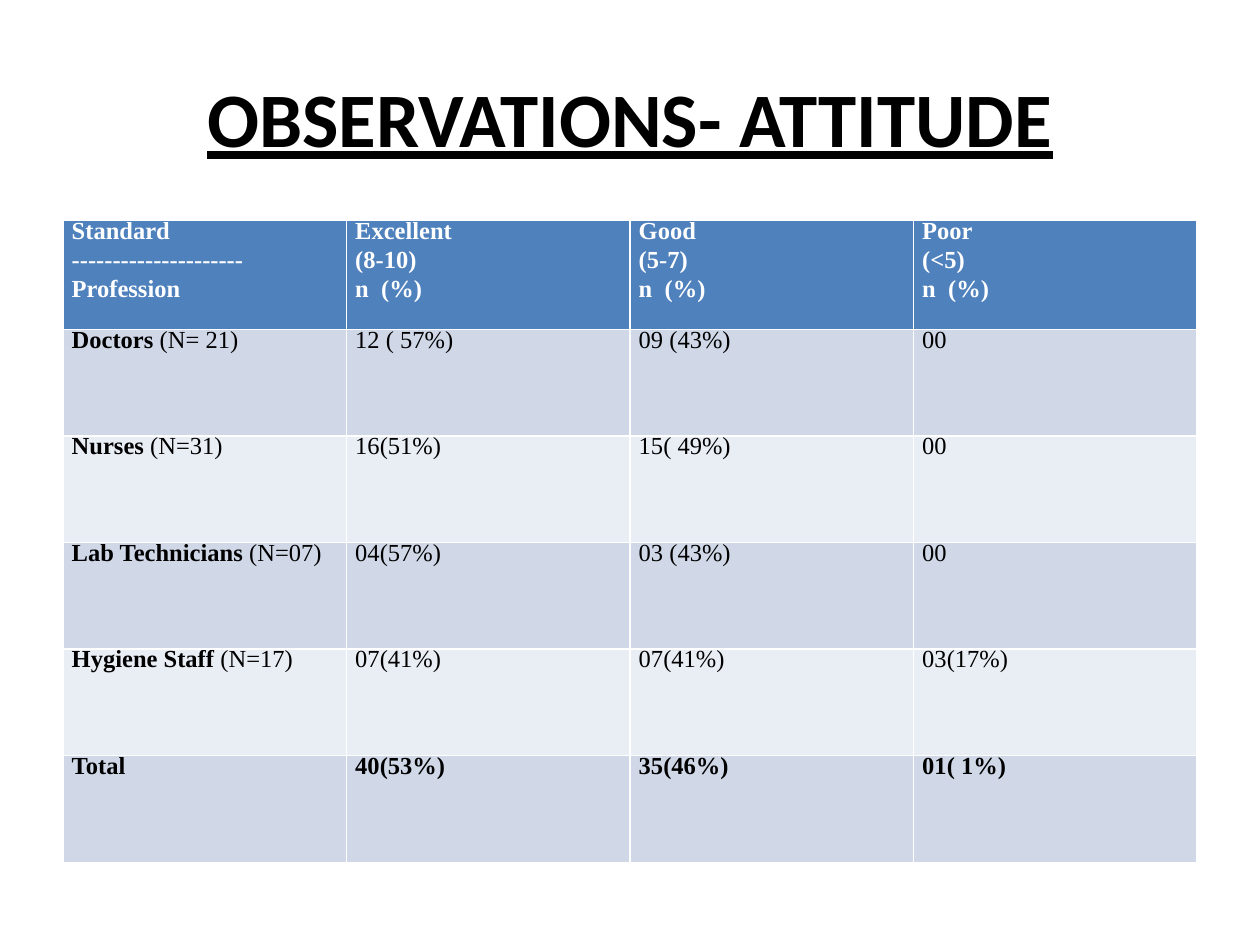
from typing import NamedTuple

from pptx import Presentation
from pptx.dml.color import RGBColor
from pptx.enum.text import MSO_ANCHOR, PP_ALIGN
from pptx.util import Pt

CENTER = PP_ALIGN.CENTER
MIDDLE = MSO_ANCHOR.MIDDLE

BLACK = RGBColor(0x00, 0x00, 0x00)
WHITE = RGBColor(0xFF, 0xFF, 0xFF)
HEADER_BLUE = RGBColor(0x4F, 0x81, 0xBD)
BANDS = (RGBColor(0xD0, 0xD8, 0xE8), RGBColor(0xE9, 0xED, 0xF4))

LEFT, WIDTH = Pt(36), Pt(648)
TABLE_TOP = Pt(126)
HEADER_HEIGHT, ROW_HEIGHT = Pt(62.3), Pt(60.9)
CELL_MARGIN = Pt(5)


class Profession(NamedTuple):
    name: str
    size: str
    scores: tuple[str, ...]
    bold_scores: bool = False


HEADERS = (
    ("Standard", "---------------------", "Profession"),
    ("Excellent", "(8-10)", "n  (%)"),
    ("Good", "(5-7)", "n  (%)"),
    ("Poor", "(<5)", "n  (%)"),
)
PROFESSIONS = (
    Profession("Doctors", " (N= 21)", ("12 ( 57%)", "09 (43%)", "00")),
    Profession("Nurses", " (N=31)", ("16(51%)", "15( 49%)", "00")),
    Profession("Lab Technicians", " (N=07)", ("04(57%)", "03 (43%)", "00")),
    Profession("Hygiene Staff", " (N=17)", ("07(41%)", "07(41%)", "03(17%)")),
    Profession("Total", "", ("40(53%)", "35(46%)", "01( 1%)"), True),
)


def add_title(s, text: str) -> None:
    title = s.shapes.title
    title.left, title.top, title.width, title.height = LEFT, Pt(21.6), WIDTH, Pt(90)
    tf = title.text_frame
    tf.text = text
    tf.vertical_anchor = MIDDLE
    p = tf.paragraphs[0]
    p.alignment = CENTER
    p.font.name, p.font.size = "Calibri", Pt(44)
    p.font.bold = p.font.underline = True
    p.font.color.rgb = BLACK


def format_cell(cell, fill: RGBColor, color: RGBColor, bold: bool) -> None:
    cell.fill.solid()
    cell.fill.fore_color.rgb = fill
    cell.margin_left = cell.margin_right = CELL_MARGIN
    cell.margin_top = cell.margin_bottom = 0
    for p in cell.text_frame.paragraphs:
        p.line_spacing = Pt(13.6)
        p.space_before = Pt(3)
        p.font.name, p.font.size = "Times New Roman", Pt(14)
        p.font.bold = bold
        p.font.color.rgb = color


def fill_header(table) -> None:
    table.rows[0].height = HEADER_HEIGHT
    for col, lines in enumerate(HEADERS):
        cell = table.cell(0, col)
        cell.text = "\n".join(lines)
        format_cell(cell, HEADER_BLUE, WHITE, True)


def fill_row(table, row: int, profession: Profession) -> None:
    table.rows[row].height = ROW_HEIGHT
    band = BANDS[(row - 1) % len(BANDS)]
    label = table.cell(row, 0)
    p = label.text_frame.paragraphs[0]
    p.add_run().text = profession.name
    if profession.size:
        r = p.add_run()
        r.text = profession.size
        r.font.bold = False
    format_cell(label, band, BLACK, True)
    for col, score in enumerate(profession.scores, 1):
        cell = table.cell(row, col)
        cell.text = score
        format_cell(cell, band, BLACK, profession.bold_scores)


def main() -> None:
    prs = Presentation()
    prs.slide_width, prs.slide_height = Pt(720), Pt(540)
    s = prs.slides.add_slide(prs.slide_layouts[5])
    add_title(s, "OBSERVATIONS- ATTITUDE")
    # The default table style supplies the white cell borders.
    height = HEADER_HEIGHT + ROW_HEIGHT * len(PROFESSIONS)
    table = s.shapes.add_table(
        len(PROFESSIONS) + 1, len(HEADERS), LEFT, TABLE_TOP, WIDTH, height
    ).table
    fill_header(table)
    for row, profession in enumerate(PROFESSIONS, 1):
        fill_row(table, row, profession)
    prs.save("out.pptx")


if __name__ == "__main__":
    main()
